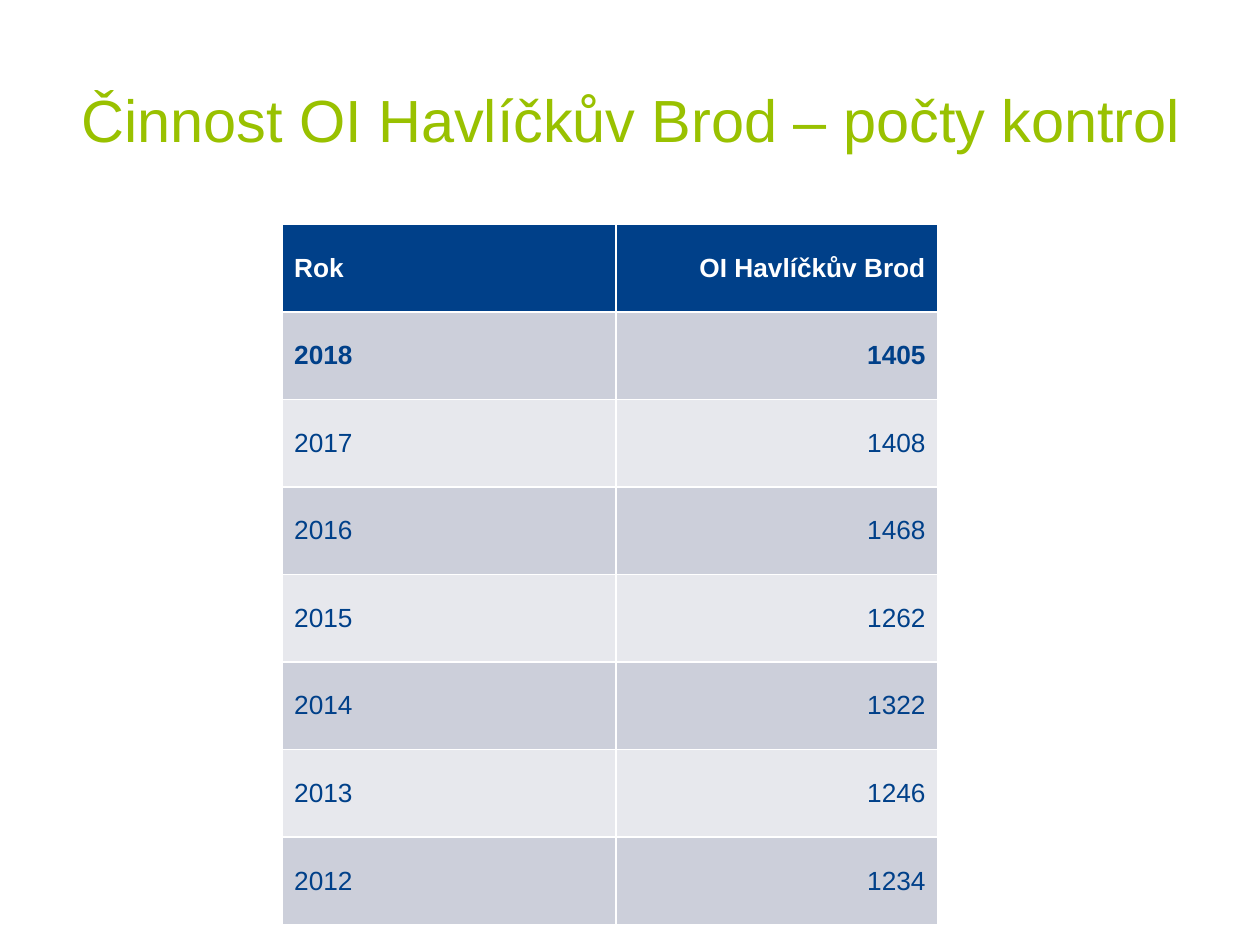
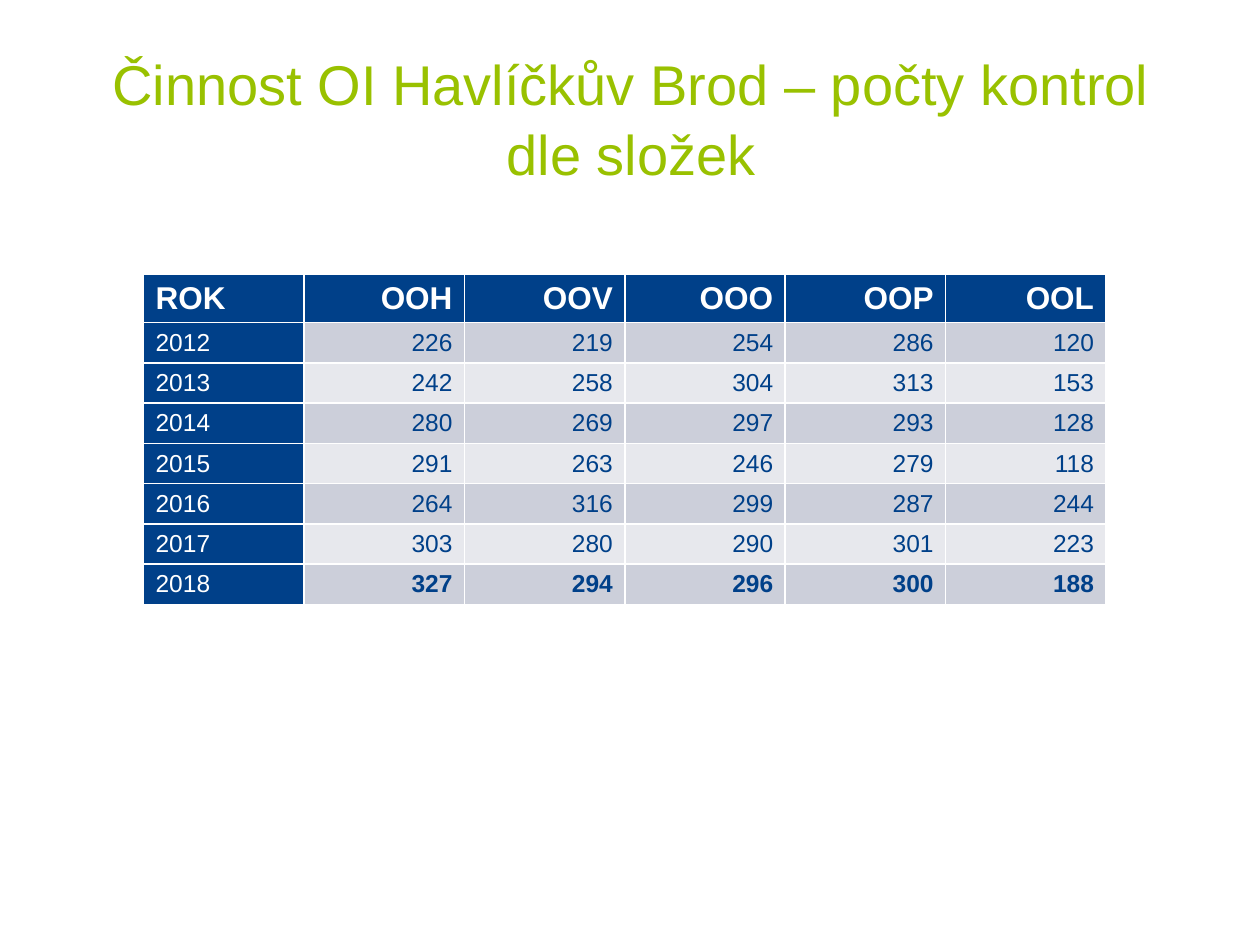
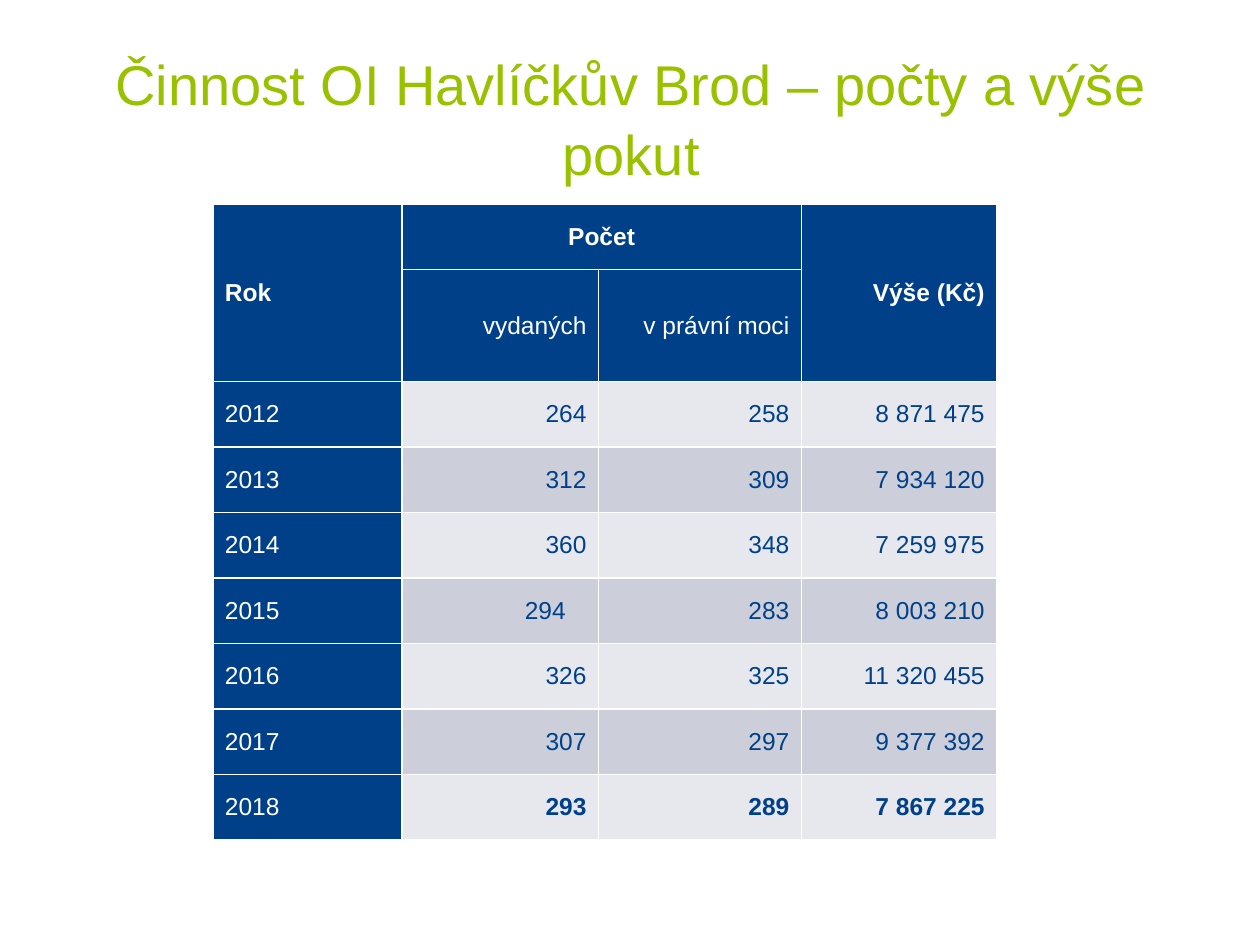
"""Builds three slides of yearly inspection and fine counts, one table on each."""
from dataclasses import dataclass

from pptx import Presentation
from pptx.dml.color import RGBColor
from pptx.enum.text import MSO_ANCHOR as Anchor, PP_ALIGN as Align
from pptx.slide import Slide
from pptx.table import _Cell as Cell
from pptx.text.text import _Paragraph as Paragraph
from pptx.util import Inches, Pt

COLORS = {
    "title": "99C100",
    "navy": "004089",
    "white": "FFFFFF",
    "band_dark": "CCCFDA",
    "band_light": "E7E8ED",
}
FONT = "Arial"
GRID_COLUMNS, GRID_ROWS = 100, 75
UNIT = Inches(0.1)
LATEST_YEAR = "2018"


@dataclass(frozen=True)
class YearTable:
    """A titled table of yearly figures, measured in grid columns and rows."""
    title: str
    title_size: int
    left: float
    top: float
    widths: list[float]
    heights: list[float]
    rows: list[list[str]]
    body_size: int
    head_size: int
    head_rows: int = 1
    dark_years: bool = True
    merges: tuple[tuple[int, int, int, int], ...] = ()
    centered: tuple[str, ...] = ()
    inset_cells: tuple[tuple[int, int], ...] = ()


TABLES = [
    YearTable(
        title="Činnost OI Havlíčkův Brod – počty kontrol",
        title_size=34, left=22.4, top=17.8,
        widths=[26.5, 25.5], heights=[6.95] * 8,
        body_size=15, head_size=15, dark_years=False,
        rows=[
            ["Rok", "OI Havlíčkův Brod"],
            ["2018", "1405"],
            ["2017", "1408"],
            ["2016", "1468"],
            ["2015", "1262"],
            ["2014", "1322"],
            ["2013", "1246"],
            ["2012", "1234"],
        ],
    ),
    YearTable(
        title="Činnost OI Havlíčkův Brod – počty kontrol dle složek",
        title_size=32, left=11.4, top=21.8,
        widths=[12.73] * 6, heights=[3.8] + [3.2] * 7,
        body_size=14, head_size=18,
        rows=[
            ["ROK", "OOH", "OOV", "OOO", "OOP", "OOL"],
            ["2012", "226", "219", "254", "286", "120"],
            ["2013", "242", "258", "304", "313", "153"],
            ["2014", "280", "269", "297", "293", "128"],
            ["2015", "291", "263", "246", "279", "118"],
            ["2016", "264", "316", "299", "287", "244"],
            ["2017", "303", "280", "290", "301", "223"],
            ["2018", "327", "294", "296", "300", "188"],
        ],
    ),
    YearTable(
        title="Činnost OI Havlíčkův Brod – počty a výše pokut",
        title_size=32, left=16.9, top=16.2,
        widths=[15, 15.6, 16.1, 15.5], heights=[5.2, 8.9] + [5.2] * 7,
        body_size=14, head_size=14, head_rows=2,
        merges=((0, 0, 1, 0), (0, 1, 0, 2), (0, 3, 1, 3)),
        centered=("Počet",), inset_cells=((5, 1),),
        rows=[
            ["Rok", "Počet", "", "Výše (Kč)"],
            ["", "vydaných", "v právní moci", ""],
            ["2012", "264", "258", "8 871 475"],
            ["2013", "312", "309", "7 934 120"],
            ["2014", "360", "348", "7 259 975"],
            ["2015", "294", "283", "8 003 210"],
            ["2016", "326", "325", "11 320 455"],
            ["2017", "307", "297", "9 377 392"],
            ["2018", "293", "289", "7 867 225"],
        ],
    ),
]


def grid(units: float) -> int:
    """Turn grid units into a length."""
    return round(units * UNIT)


def style(paragraph: Paragraph, size: int, color: str, align: Align, bold: bool = False) -> None:
    """Set the font and alignment of a paragraph."""
    paragraph.alignment = align
    font = paragraph.font
    font.name, font.size, font.bold = FONT, Pt(size), bold
    font.color.rgb = RGBColor.from_string(COLORS[color])


def add_title(slide: Slide, text: str, size: int) -> None:
    """Draw the centred slide title."""
    frame = slide.shapes.add_textbox(grid(5.1), grid(3), grid(90), grid(12.5)).text_frame
    frame.word_wrap = True
    frame.vertical_anchor = Anchor.MIDDLE
    heading = frame.paragraphs[0]
    heading.text = text
    heading.line_spacing = 1.05
    style(heading, size, "title", Align.CENTER)


def fill_cell(cell: Cell, data: YearTable, row: int, column: int) -> None:
    """Write one figure or label with its band colour and weight."""
    text = data.rows[row][column]
    dark = row < data.head_rows or (data.dark_years and column == 0)
    band = "band_dark" if row % 2 else "band_light"
    cell.fill.solid()
    cell.fill.fore_color.rgb = RGBColor.from_string(COLORS["navy" if dark else band])
    cell.vertical_anchor = Anchor.MIDDLE
    cell.margin_top = cell.margin_bottom = grid(0.4)
    cell.margin_left = grid(0.95)
    cell.margin_right = grid(2.6 if (row, column) in data.inset_cells else 0.95)
    cell.text = text
    align = Align.CENTER if text in data.centered else Align.RIGHT if column else Align.LEFT
    latest = data.rows[row][0] == LATEST_YEAR and not dark
    size = data.body_size if row else data.head_size
    style(cell.text_frame.paragraphs[0], size, "white" if dark else "navy", align,
          row == 0 or latest)


def add_year_table(slide: Slide, data: YearTable) -> None:
    """Draw the table of yearly figures."""
    table = slide.shapes.add_table(
        len(data.heights), len(data.widths), grid(data.left), grid(data.top),
        grid(sum(data.widths)), grid(sum(data.heights))).table
    table.first_col = data.dark_years
    for column, width in zip(table.columns, data.widths):
        column.width = grid(width)
    for row, height in zip(table.rows, data.heights):
        row.height = grid(height)
    for row, labels in enumerate(data.rows):
        for column in range(len(labels)):
            fill_cell(table.cell(row, column), data, row, column)
    for top, left, bottom, right in data.merges:
        table.cell(top, left).merge(table.cell(bottom, right))


def main() -> None:
    """Build and save the presentation."""
    deck = Presentation()
    deck.slide_width, deck.slide_height = grid(GRID_COLUMNS), grid(GRID_ROWS)
    for data in TABLES:
        slide = deck.slides.add_slide(deck.slide_layouts[6])
        add_title(slide, data.title, data.title_size)
        add_year_table(slide, data)
    deck.save("out.pptx")


if __name__ == "__main__":
    main()
